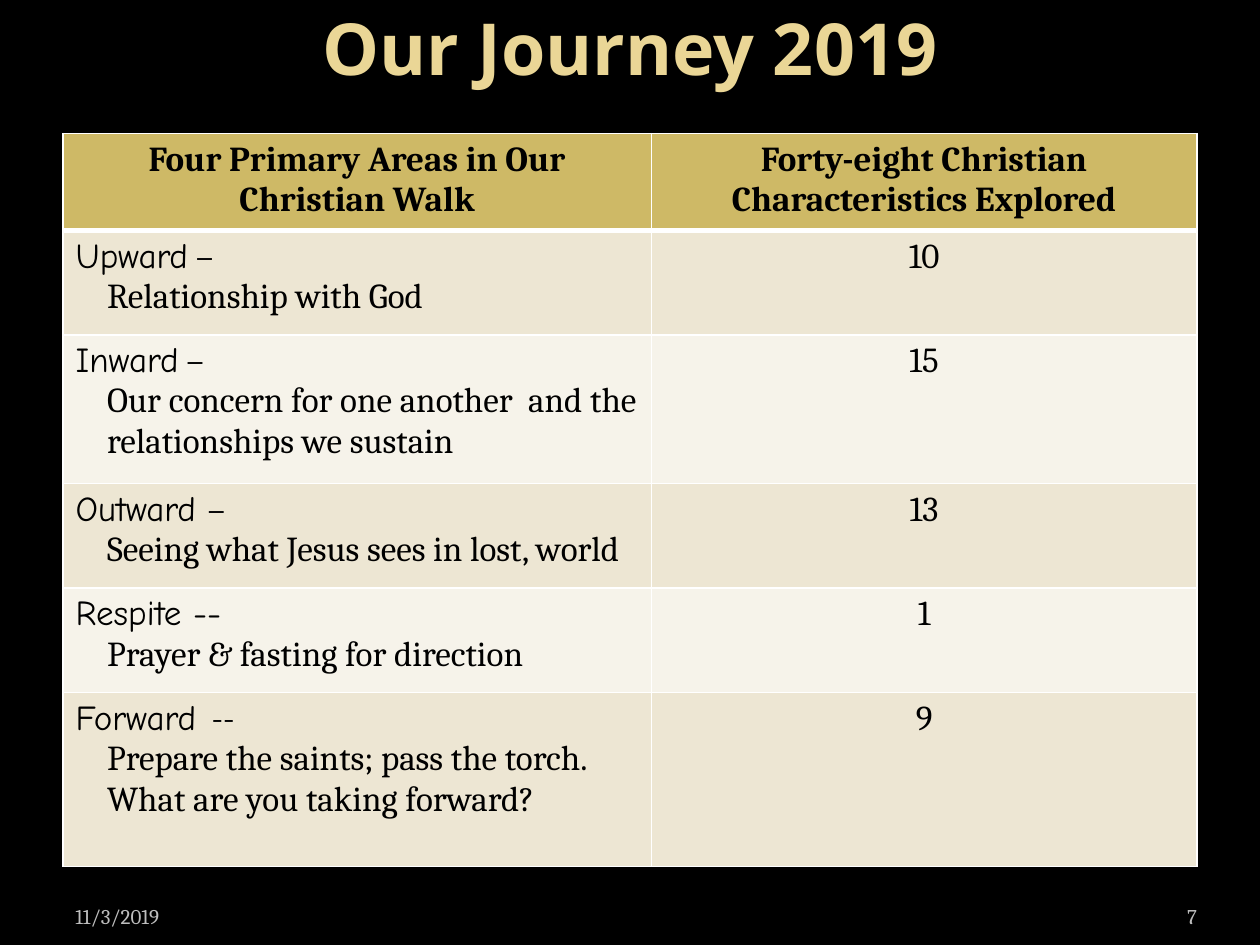
import pptx
import pptx.dml.color
import pptx.enum.text
import pptx.oxml
import pptx.oxml.ns
import pptx.util

Inches = pptx.util.Inches
Pt = pptx.util.Pt
RGBColor = pptx.dml.color.RGBColor
Align = pptx.enum.text.PP_ALIGN
Anchor = pptx.enum.text.MSO_ANCHOR

BLACK = RGBColor(0x00, 0x00, 0x00)
WHITE = RGBColor(0xFF, 0xFF, 0xFF)
GOLD = RGBColor(0xCE, 0xB9, 0x66)
PALE_GOLD = RGBColor(0xEA, 0xD6, 0x96)
SAND = RGBColor(0xED, 0xE6, 0xD3)
IVORY = RGBColor(0xF6, 0xF3, 0xEA)
GRAY = RGBColor(0xBD, 0xBD, 0xBD)

HEADINGS = [
    "Four Primary Areas in Our Christian Walk",
    "Forty-eight Christian Characteristics Explored",
]
AREAS = [
    ("Upward", " –", "Relationship with God", "10", 0.83),
    ("Inward", " –",
     "Our concern for one another  and the relationships we sustain",
     "15", 1.18),
    ("Outward ", "–", "Seeing what Jesus sees in lost, world", "13", 0.83),
    ("Respite --", "", "Prayer & fasting for direction", "1", 0.83),
    ("Forward", "  --",
     "Prepare the saints; pass the torch. What are you taking forward?",
     "9", 1.38),
]
HEADING_HEIGHT = 0.74
COLUMN_WIDTHS = [4.67, 4.33]


class JourneySlide:
    title_font = "Noto Sans"
    body_font = "Cambria"
    area_font = "Comic Neue"
    body_size = 20

    def __init__(self, presentation):
        self.slide = presentation.slides.add_slide(presentation.slide_layouts[6])
        background = self.slide.background.fill
        background.solid()
        background.fore_color.rgb = BLACK

    def style(self, paragraph, size, color, name=None, bold=False,
              align=Align.LEFT):
        paragraph.alignment = align
        font = paragraph.font
        font.size = Pt(size)
        font.bold = bold
        font.color.rgb = color
        if name:
            font.name = name

    def text(self, words, left, top, width, height, size, color, name,
             anchor=Anchor.BOTTOM, side_inset=0.1, **look):
        box = self.slide.shapes.add_textbox(
            Inches(left), Inches(top), Inches(width), Inches(height))
        frame = box.text_frame
        frame.word_wrap = True
        frame.vertical_anchor = anchor
        frame.margin_left = frame.margin_right = Inches(side_inset)
        paragraph = frame.paragraphs[0]
        paragraph.text = words
        self.style(paragraph, size, color, name, **look)

    def table(self, left, top, widths, heights):
        grid = self.slide.shapes.add_table(
            len(heights), len(widths), Inches(left), Inches(top),
            Inches(sum(widths)), Inches(sum(heights))).table
        for column, width in zip(grid.columns, widths):
            column.width = Inches(width)
        for row, height in zip(grid.rows, heights):
            row.height = Inches(height)
        return grid

    def paint(self, cell, color, top=1, bottom=1):
        properties = cell._tc.get_or_add_tcPr()
        for side, weight in zip("LRTB", (1, 1, top, bottom)):
            properties.append(pptx.oxml.parse_xml(
                f'<a:ln{side} {pptx.oxml.ns.nsdecls("a")} w="{Pt(weight)}">'
                f'<a:solidFill><a:srgbClr val="{WHITE}"/></a:solidFill>'
                f'</a:ln{side}>'))
        cell.fill.solid()
        cell.fill.fore_color.rgb = color

    def centered(self, cell, words, bold=False):
        paragraph = cell.text_frame.paragraphs[0]
        paragraph.text = words
        self.style(paragraph, self.body_size, BLACK, self.body_font, bold,
                   Align.CENTER)

    def area(self, cell, term, dash, description):
        heading = cell.text_frame.paragraphs[0]
        self.style(heading, self.body_size, BLACK)
        for words, name in ((term, self.area_font), (dash, self.body_font)):
            if words:
                run = heading.add_run()
                run.text = words
                run.font.name = name
        detail = cell.text_frame.add_paragraph()
        detail.text = description
        self.style(detail, self.body_size, BLACK, self.body_font)
        detail._p.get_or_add_pPr().set("marL", str(Inches(0.25)))


def main():
    presentation = pptx.Presentation()
    presentation.slide_width = Inches(10)
    presentation.slide_height = Inches(7.5)
    journey = JourneySlide(presentation)

    journey.text("Our Journey 2019", 0.5, -0.25, 9, 1.25, 41, PALE_GOLD,
                 journey.title_font, Anchor.MIDDLE, bold=True,
                 align=Align.CENTER)

    heights = [HEADING_HEIGHT] + [height for *_, height in AREAS]
    grid = journey.table(0.5, 1.06, COLUMN_WIDTHS, heights)
    for column, heading in enumerate(HEADINGS):
        cell = grid.cell(0, column)
        journey.paint(cell, GOLD, bottom=3)
        journey.centered(cell, heading, bold=True)
    for row, (term, dash, description, count, _) in enumerate(AREAS, 1):
        area_cell, count_cell = grid.cell(row, 0), grid.cell(row, 1)
        for cell in (area_cell, count_cell):
            journey.paint(cell, SAND if row % 2 else IVORY,
                          top=3 if row == 1 else 1)
        journey.area(area_cell, term, dash, description)
        journey.centered(count_cell, count)

    journey.text("11/3/2019", 0.5, 7.02, 2.33, 0.4, 12, GRAY,
                 journey.body_font)
    journey.text("7", 8.67, 7.02, 0.83, 0.4, 12, GRAY, journey.body_font,
                 side_inset=0, align=Align.RIGHT)
    presentation.save("out.pptx")


if __name__ == "__main__":
    main()
